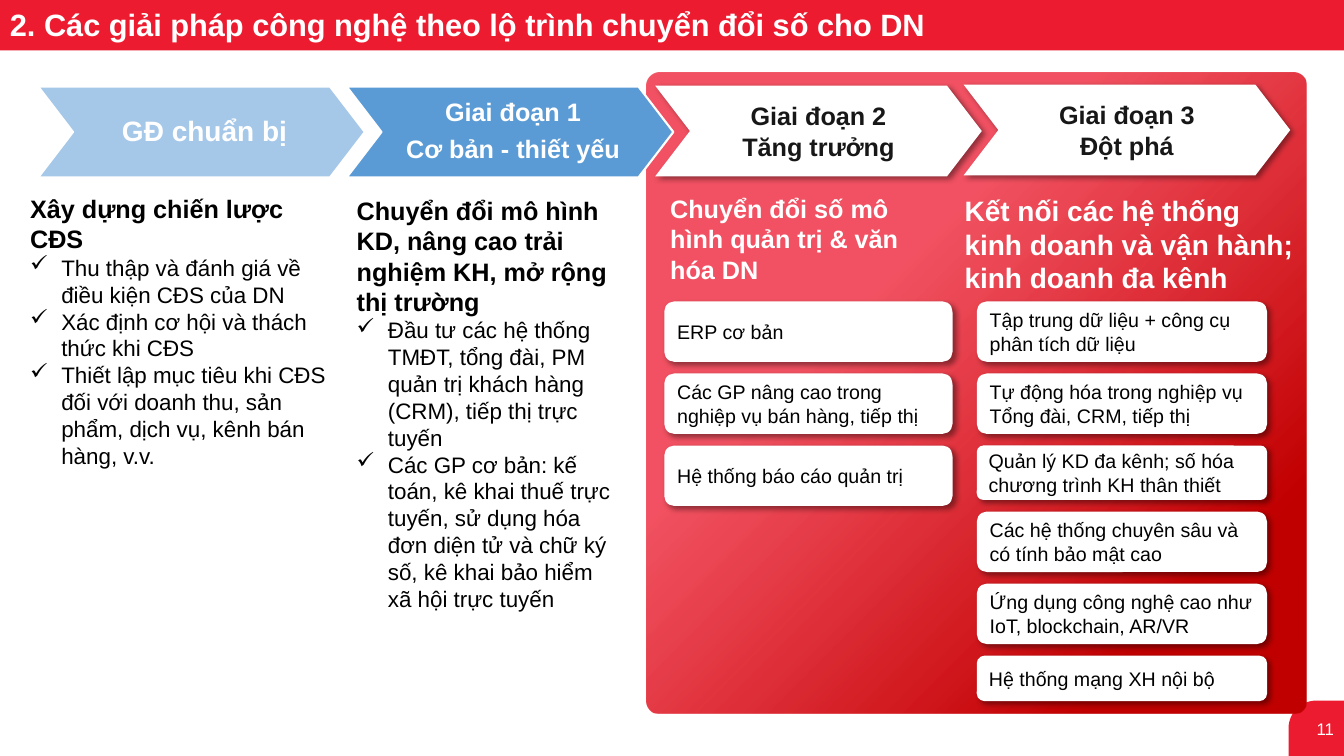
"""Builds the slide on technology solutions along the digital roadmap."""
from lxml.etree import SubElement
from pptx import Presentation
from pptx.dml.color import RGBColor
from pptx.enum.shapes import MSO_SHAPE as Preset
from pptx.enum.text import MSO_ANCHOR as Anchor, MSO_AUTO_SIZE as Fit, PP_ALIGN as Align
from pptx.oxml.ns import qn
from pptx.util import Inches, Pt

CELL = Inches(0.1)
COLUMNS, ROWS = 133.33, 75
RED, DARK_RED = "ED1B2F", "C00000"
WHITE, BLACK, INK = "FFFFFF", "000000", "181717"
PALE_BLUE, BLUE = "9DC3E6", "5B9BD5"


def paint(target, value, alpha=None):
    """Set a colour from a hex string, with optional opacity in percent."""
    target.rgb = RGBColor.from_string(value)
    if alpha:
        SubElement(target._xFill[0] if hasattr(target, "_xFill") else target, qn("a:alpha"))


def add_alpha(parent, percent):
    """Give every RGB colour under an element its opacity."""
    for tint in parent.iter(qn("a:srgbClr")):
        SubElement(tint, qn("a:alpha")).set("val", str(percent * 1000))


def cells(*counts):
    """Turn grid counts into lengths."""
    return [int(count * CELL) for count in counts]


def write(frame, lines, size=18, color=BLACK, bold=False, align=Align.LEFT,
          anchor=Anchor.TOP, wrap=True, bullet=None, leading=None, after=None):
    """Append formatted paragraphs to a text frame."""
    frame.word_wrap = wrap
    frame.vertical_anchor = anchor
    for line in lines:
        paragraph = frame.paragraphs[-1]
        if paragraph.runs:
            paragraph = frame.add_paragraph()
        paragraph.alignment = align
        if leading:
            paragraph.line_spacing = leading
        if after:
            paragraph.space_after = Pt(after)
        if bullet:
            props = paragraph._p.get_or_add_pPr()
            props.set("marL", str(Inches(0.31)))
            props.set("indent", str(-Inches(0.31)))
            SubElement(props, qn("a:buChar")).set("char", bullet)
        run = paragraph.add_run()
        run.text = line
        run.font.name = "Arial"
        run.font.size = Pt(size)
        run.font.bold = bold
        paint(run.font.color, color)


class RoadmapSlide:
    """Holds the style and the slide, and draws each kind of element."""

    def __init__(self, slide):
        """Keep the slide to draw on."""
        self.slide = slide
        self.shapes = slide.shapes

    def finish(self, shape, fill, outline=None, shadow=False):
        """Apply fill, outline and shadow to a shape."""
        shape.shadow.inherit = False
        if fill:
            shape.fill.solid()
            paint(shape.fill.fore_color, fill)
        if outline:
            paint(shape.line.color, outline)
            shape.line.width = Pt(1.5)
        else:
            shape.line.fill.background()
        if shadow:
            effects = shape._element.spPr.find(qn("a:effectLst"))
            cast = SubElement(effects, qn("a:outerShdw"), blurRad=str(Pt(4)),
                              dist=str(Pt(3)), dir="2700000", algn="tl", rotWithShape="0")
            SubElement(cast, qn("a:srgbClr")).set("val", BLACK)
            add_alpha(cast, 40)
        return shape

    def block(self, preset, box, fill, adjust=None, shadow=False):
        """Draw a preset shape."""
        shape = self.shapes.add_shape(preset, *cells(*box))
        if adjust is not None:
            shape.adjustments[0] = adjust
        return self.finish(shape, fill, shadow=shadow)

    def panel(self, box):
        """Draw the rounded panel with a diagonal red gradient."""
        panel = self.block(Preset.ROUNDED_RECTANGLE, box, None, 0.02)
        panel.fill.gradient()
        panel.fill.gradient_angle = 315
        for stop, hue, place in zip(panel.fill.gradient_stops, (RED, DARK_RED), (0.34, 0.83)):
            paint(stop.color, hue)
            stop.position = place
        add_alpha(panel._element.spPr.find(qn("a:gradFill"))[0][0], 75)

    def chevron(self, left, top, lines, fill, ink, size=18, flat=True, alpha=None):
        """Draw a stage arrow with its title."""
        width, height, notch = 32.4, 9, 3.45
        outline = [(width - notch, 0), (width, height / 2), (width - notch, height),
                   (0, height), (notch, height / 2)]
        pen = self.shapes.build_freeform(*cells(left, top))
        pen.add_line_segments([cells(left + x, top + y) for x, y in outline])
        arrow = self.finish(pen.convert_to_shape(), fill, WHITE if flat else None, not flat)
        if alpha:
            add_alpha(arrow._element.spPr.find(qn("a:solidFill")), alpha)
        frame = arrow.text_frame
        if flat:
            frame.margin_left, frame.margin_right = cells(4.4, 3.8)
            frame.margin_top = frame.margin_bottom = Inches(0.03)
        write(frame, lines, size=size, color=ink, bold=True, align=Align.CENTER,
              anchor=Anchor.MIDDLE, leading=0.9 if flat else None, after=7 if flat else None)

    def caption(self, box, heading, points=(), **style):
        """Write a bold heading followed by ticked points."""
        frame = self.shapes.add_textbox(*cells(*box)).text_frame
        frame.auto_size = Fit.SHAPE_TO_FIT_TEXT
        write(frame, [heading], bold=True, **style)
        write(frame, points, size=16, bullet="✓", wrap=style.get("wrap", True))

    def stack(self, left, top, width, solutions, gap=1.15):
        """Stack white solution cards with equal gaps."""
        for label, height in solutions:
            card = self.block(Preset.ROUNDED_RECTANGLE, (left, top, width, height), WHITE,
                              0.12 if height == 5.4 else None, shadow=True)
            write(card.text_frame, [label], size=14, anchor=Anchor.MIDDLE)
            top += height + gap

    def page_number(self, number):
        """Draw the corner tab with the page number."""
        side = 5.5
        tab = self.block(Preset.ROUND_1_RECTANGLE,
                         (COLUMNS - side, ROWS - side, side, side), RED, 0.5)
        tab._element.spPr.find(qn("a:xfrm")).set("flipH", "1")
        write(tab.text_frame, [number], size=12, color=WHITE, align=Align.RIGHT,
              anchor=Anchor.MIDDLE)


def main():
    """Build and save the slide."""
    deck = Presentation()
    deck.slide_width, deck.slide_height = cells(COLUMNS, ROWS)
    page = RoadmapSlide(deck.slides.add_slide(deck.slide_layouts[6]))

    page.page_number("11")
    page.block(Preset.RECTANGLE, (0, 0, COLUMNS, 5), RED)
    page.panel((64.1, 7.2, 65.5, 63.6))
    page.caption((0, 0.1, 94.2, 4.7),
                 "2. Các giải pháp công nghệ theo lộ trình chuyển đổi số cho DN",
                 size=22, color=WHITE, wrap=False)

    page.chevron(3.8, 8.6, ["GĐ chuẩn bị"], PALE_BLUE, WHITE, size=20, alpha=90)
    page.chevron(34.4, 8.6, ["Giai đoạn 1", "Cơ bản - thiết yếu"], BLUE, WHITE)
    page.chevron(65, 8.5, ["Giai đoạn 2", "Tăng trưởng"], WHITE, INK, flat=False)
    page.chevron(95.6, 8.4, ["Giai đoạn 3", "Đột phá"], WHITE, INK, flat=False)

    page.caption((2, 18.7, 31.5, 28.6), "Xây dựng chiến lược CĐS", [
        "Thu thập và đánh giá về điều kiện CĐS của DN",
        "Xác định cơ hội và thách thức khi CĐS",
        "Thiết lập mục tiêu khi CĐS đối với doanh thu, sản phẩm, dịch vụ, kênh bán hàng, v.v."])
    page.caption((34.4, 18.9, 27.5, 42.7),
                 "Chuyển đổi mô hình KD, nâng cao trải nghiệm KH, mở rộng thị trường", [
        "Đầu tư các hệ thống TMĐT, tổng đài, PM quản trị khách hàng (CRM), tiếp thị trực tuyến",
        "Các GP cơ bản: kế toán, kê khai thuế trực tuyến, sử dụng hóa đơn diện tử và chữ ký số, "
        "kê khai bảo hiểm xã hội trực tuyến"])
    page.caption((65.5, 18.7, 28.8, 10.1), "Chuyển đổi số mô hình quản trị & văn hóa DN",
                 color=WHITE)
    page.caption((94.7, 18.7, 34.9, 11.1),
                 "Kết nối các hệ thống kinh doanh và vận hành; kinh doanh đa kênh",
                 size=20, color=WHITE)

    page.stack(65.9, 29.9, 28.6, [
        ("ERP cơ bản", 6),
        ("Các GP nâng cao trong nghiệp vụ bán hàng, tiếp thị", 6),
        ("Hệ thống báo cáo quản trị", 6)])
    page.stack(96.9, 29.9, 28.8, [
        ("Tập trung dữ liệu + công cụ phân tích dữ liệu", 6),
        ("Tự động hóa trong nghiệp vụ Tổng đài, CRM, tiếp thị", 6),
        ("Quản lý KD đa kênh; số hóa chương trình KH thân thiết", 5.4),
        ("Các hệ thống chuyên sâu và có tính bảo mật cao", 6),
        ("Ứng dụng công nghệ cao như IoT, blockchain, AR/VR", 6),
        ("Hệ thống mạng XH nội bộ", 4.5)])

    deck.save("out.pptx")


if __name__ == "__main__":
    main()
